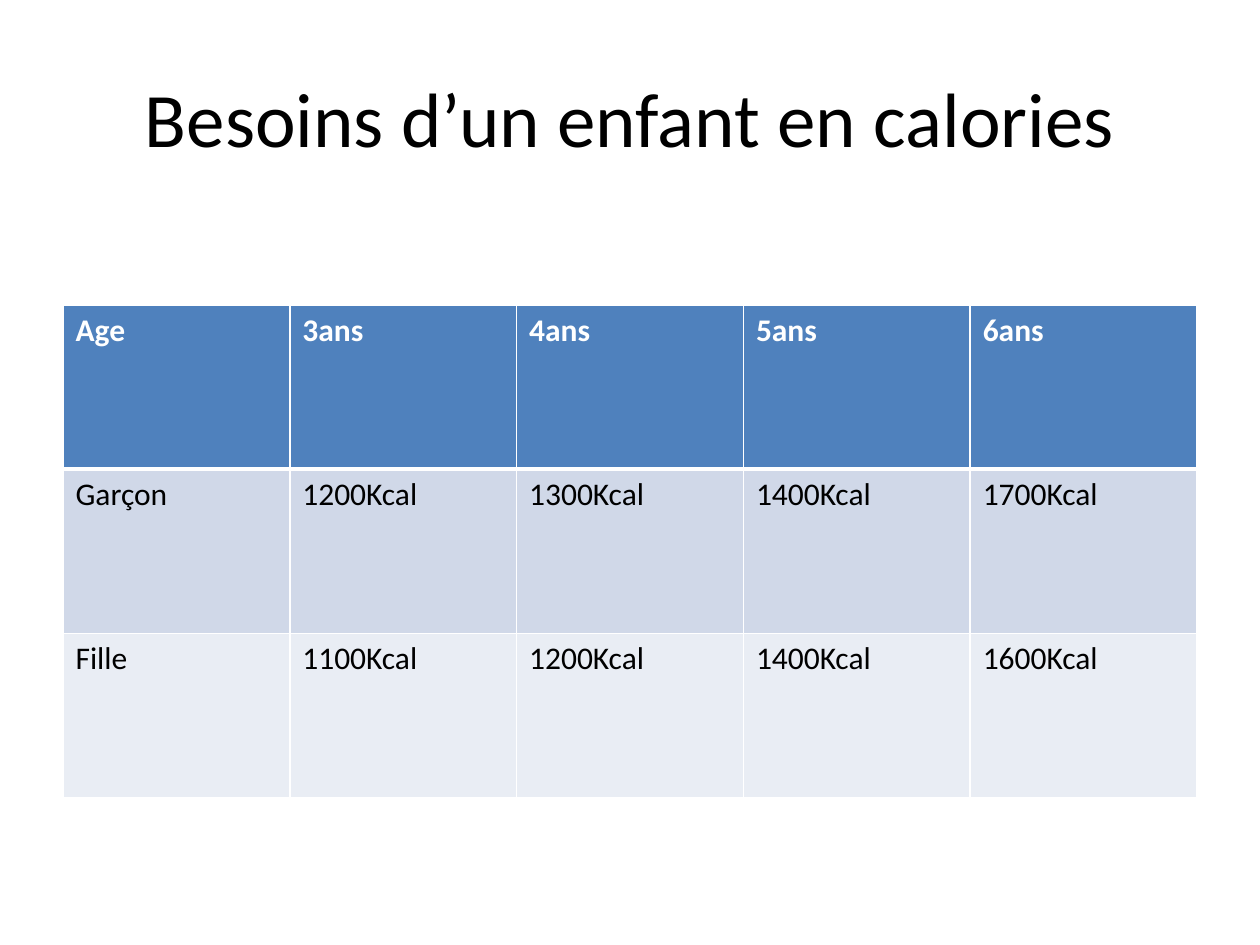
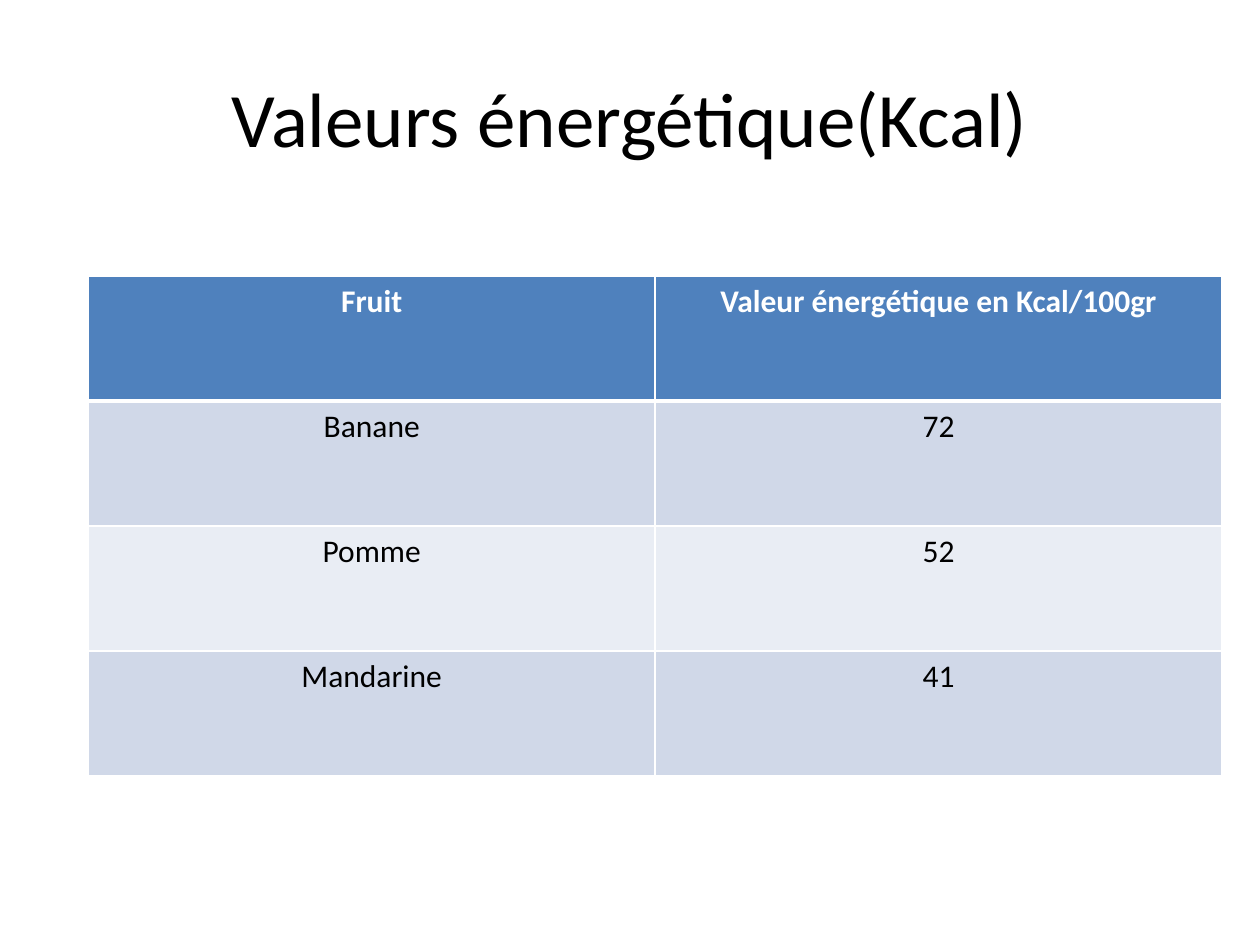
from pptx import Presentation
from pptx.dml.color import RGBColor
from pptx.enum.text import MSO_ANCHOR, PP_ALIGN
from pptx.oxml import parse_xml
from pptx.oxml.ns import nsdecls
from pptx.util import Inches, Pt

LEFT, CENTER = PP_ALIGN.LEFT, PP_ALIGN.CENTER
MIDDLE = MSO_ANCHOR.MIDDLE
TITLE_ONLY = 5
FONT = "Calibri"
COLORS = {
    "text": "000000",
    "head": "4F81BD",
    "odd": "D0D8E8",
    "even": "E9EDF4",
    "white": "FFFFFF",
}


class Deck:
    """Holds the shared style and the current slide."""

    def __init__(self):
        self.prs = Presentation()
        self.prs.slide_width, self.prs.slide_height = Inches(10), Inches(7.5)
        self.slide = None

    def style(self, par, size, color, align, bold=False):
        par.alignment = align
        font = par.font
        font.name, font.size, font.bold = FONT, Pt(size), bold
        font.color.rgb = RGBColor.from_string(COLORS[color])

    def start(self, title):
        """Add a slide with its title."""
        self.slide = self.prs.slides.add_slide(self.prs.slide_layouts[TITLE_ONLY])
        box = self.slide.shapes.title
        box.left, box.top = Inches(0.5), Inches(0.3)
        box.width, box.height = Inches(9), Inches(1.25)
        frame = box.text_frame
        frame.text = title
        frame.vertical_anchor = MIDDLE
        self.style(frame.paragraphs[0], 44, "text", CENTER)

    def border(self, cell, row):
        """Draw white cell edges, thick between the header and the body."""
        widths = {"L": 1, "R": 1, "T": 3 if row == 1 else 1, "B": 1 if row else 3}
        props = cell._tc.get_or_add_tcPr()
        for side, width in widths.items():
            props.append(parse_xml(
                f'<a:ln{side} {nsdecls("a")} w="{Pt(width)}"><a:solidFill>'
                f'<a:srgbClr val="{COLORS["white"]}"/></a:solidFill></a:ln{side}>'))

    def table(self, rows, left, top, height, align):
        """Add a banded table with equal rows and columns."""
        frame = self.slide.shapes.add_table(
            len(rows), len(rows[0]),
            Inches(left), Inches(top), Inches(9), Inches(height))
        for r, row in enumerate(rows):
            band = "head" if r == 0 else "odd" if r % 2 else "even"
            ink = "text" if r else "white"
            for c, text in enumerate(row):
                cell = frame.table.cell(r, c)
                cell.text = text
                self.style(cell.text_frame.paragraphs[0], 18, ink, align, r == 0)
                self.border(cell, r)
                cell.fill.solid()
                cell.fill.fore_color.rgb = RGBColor.from_string(COLORS[band])


def main():
    deck = Deck()

    deck.start("Besoins d’un enfant en calories")
    needs = [
        ["Age", "3ans", "4ans", "5ans", "6ans"],
        ["Garçon", "1200Kcal", "1300Kcal", "1400Kcal", "1700Kcal"],
        ["Fille", "1100Kcal", "1200Kcal", "1400Kcal", "1600Kcal"],
    ]
    deck.table(needs, 0.5, 2.42, 3.91, LEFT)

    deck.start("Valeurs énergétique(Kcal)")
    fruits = [
        ["Fruit", "Valeur énergétique en Kcal/100gr"],
        ["Banane", "72"],
        ["Pomme", "52"],
        ["Mandarine", "41"],
    ]
    deck.table(fruits, 0.7, 2.19, 3.97, CENTER)

    deck.prs.save("out.pptx")


if __name__ == "__main__":
    main()
